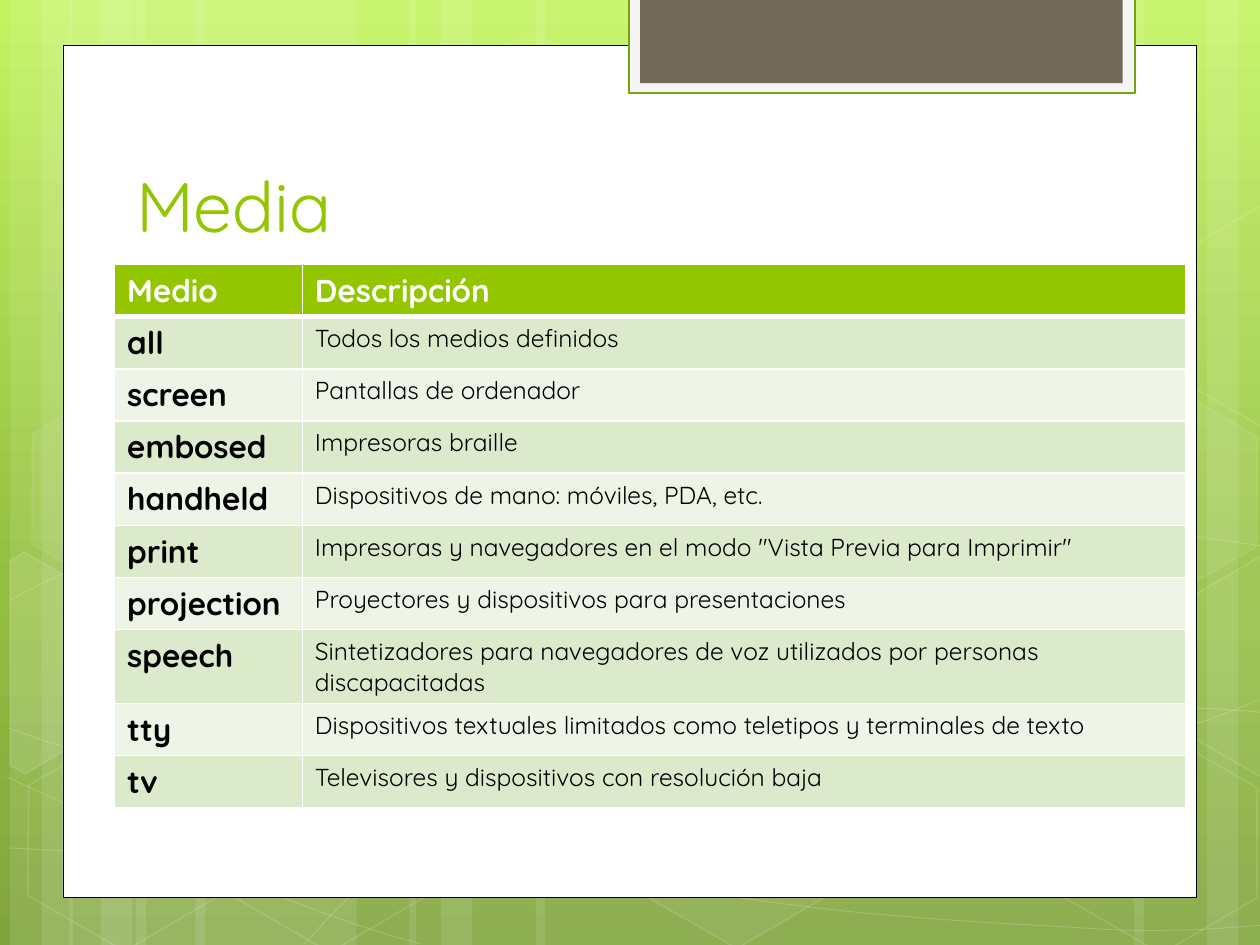
from copy import deepcopy
from math import cos, radians, sin

from lxml import etree
from pptx import Presentation
from pptx.dml.color import RGBColor
from pptx.enum.shapes import MSO_SHAPE
from pptx.enum.text import MSO_ANCHOR, MSO_AUTO_SIZE, PP_ALIGN
from pptx.oxml.ns import qn
from pptx.util import Inches, Pt

RECT, HEX = MSO_SHAPE.RECTANGLE, MSO_SHAPE.HEXAGON
TOP, BOTTOM = MSO_ANCHOR.TOP, MSO_ANCHOR.BOTTOM
NONE, LEFT = MSO_AUTO_SIZE.NONE, PP_ALIGN.LEFT
FONT, WHITE, GREEN, BLACK = "Quicksand", "FFFFFF", "94C600", "000000"
COLS, ROWS, TURN = 1000, 750, 30
UNIT = Inches(10) // COLS
PAGE = (0, 0, COLS, ROWS)

BANDS = [(108, 175), (8, 50), (33, 83), (155, 175), (55, 50), (80, 83),
         (733, 175), (958, 50), (900, 83), (425, 308), (325, 50), (350, 83)]
WAVES = [
    [(7, 673), (61, 676), (115, 679), (190, 678), (265, 677), (358, 675),
     (458, 665), (558, 655), (700, 636), (792, 617), (883, 598), (977, 568),
     (1007, 551)],
    [(7, 477), (36, 461), (65, 446), (121, 431), (178, 416), (259, 394),
     (347, 387), (436, 380), (544, 379), (654, 387), (764, 395), (947, 426),
     (1007, 434)],
    [(6, 617), (127, 672), (247, 727), (334, 749)],
    [(7, 578), (38, 589), (70, 600), (128, 616), (186, 631), (273, 656),
     (357, 673), (440, 690), (545, 708), (628, 718), (711, 729), (800, 733),
     (853, 736), (905, 740), (919, 738), (945, 738), (971, 737), (989, 735),
     (1007, 734)],
    [(242, 749), (260, 729), (278, 709), (302, 691), (326, 673), (360, 653),
     (388, 639), (416, 625), (433, 619), (470, 609), (506, 599), (573, 585),
     (608, 578), (644, 571), (649, 571), (680, 569), (711, 566), (760, 563),
     (794, 562), (829, 561), (886, 562), (886, 562), (886, 562), (953, 562),
     (953, 562), (971, 563), (988, 564), (997, 565), (1006, 566), (1003, 565),
     (1006, 566)],
]
HEXES = [(334, 36, 4, 8), (497, 589, 6, 12), (11, 591, 0, 12),
         (14, 312, 7, 8), (174, 592, 0, 12), (753, 453, 10, 12),
         (834, 593, 0, 12), (834, 314, 7, 8)]
PARTS = [
    ((-33, 459, 138, 152), 10,
     [(8, 445), (19, 438), (96, 482), (95, 570), (20, 614), (8, 607)]),
    ((917, 444, 136, 152), 4,
     [(926, 485), (1001, 441), (1009, 446), (1009, 613), (1002, 617),
      (926, 573)]),
    ((917, 165, 136, 152), 0,
     [(926, 207), (1001, 163), (1010, 168), (1009, 335), (1002, 339),
      (926, 295)]),
]
MEDIA = [
    ("Medio", "Descripción"),
    ("all", "Todos los medios definidos"),
    ("screen", "Pantallas de ordenador"),
    ("embosed", "Impresoras braille"),
    ("handheld", "Dispositivos de mano: móviles, PDA, etc."),
    ("print", 'Impresoras y navegadores en el modo "Vista Previa para Imprimir"'),
    ("projection", "Proyectores y dispositivos para presentaciones"),
    ("speech", "Sintetizadores para navegadores de voz utilizados por personas "
               "discapacitadas"),
    ("tty", "Dispositivos textuales limitados como teletipos y terminales de texto"),
    ("tv", "Televisores y dispositivos con resolución baja"),
]


def rgb(code):
    return RGBColor.from_string(code)


def tint(fill, code, alpha=100):
    if not alpha:
        fill.background()
        return
    fill.solid()
    fill.fore_color.rgb = rgb(code)
    if alpha < 100:
        node = fill._xPr.find(".//" + qn("a:srgbClr"))
        etree.SubElement(node, qn("a:alpha"), val=str(alpha * 1000))


def style(shape, fill=WHITE, alpha=100, line=WHITE, width=0, clear=100):
    shape.shadow.inherit = False
    tint(shape.fill, fill, alpha)
    tint(shape.line.fill, line, clear if width else 0)
    if width:
        shape.line.width = Pt(width)
    return shape


def spot(box, x, y, w, h):
    return [UNIT * n for n in (box[0] + x, box[1] + y, w, h)]


def block(slide, box, area, kind=RECT, **look):
    return style(slide.shapes.add_shape(kind, *spot(box, *area)), **look)


def trace(slide, box, points, close, **look):
    dots = [(round((box[0] + x) * UNIT), round((box[1] + y) * UNIT))
            for x, y in points]
    pen = slide.shapes.build_freeform(*dots[0], scale=1.0)
    pen.add_line_segments(dots[1:], close=close)
    return style(pen.convert_to_shape(), **look)


def bend(shape):
    lines = list(shape.element.iter(qn("a:lnTo")))
    for first, *rest in zip(lines[::3], lines[1::3], lines[2::3]):
        curve = etree.Element(qn("a:cubicBezTo"))
        first.addprevious(curve)
        for line in (first, *rest):
            curve.append(line[0])
            line.getparent().remove(line)


def unturn(points, area):
    left, top, wide, high = area
    mid, row = left + wide / 2, top + high / 2
    c, s = cos(radians(TURN)), sin(radians(TURN))
    return [(mid + (x - mid) * c + (y - row) * s,
             row - (x - mid) * s + (y - row) * c) for x, y in points]


def write(frame, text, size=14, color=BLACK, bold=False):
    para = frame.paragraphs[0]
    para.alignment = LEFT
    run = para.add_run()
    run.text = text
    font = run.font
    font.name, font.size, font.bold = FONT, Pt(size), bold
    font.color.rgb = rgb(color)


def sky(slide):
    fill = slide.background.fill
    fill.gradient()
    fill.gradient_angle = 270
    stops = slide.element.find(".//" + qn("a:gsLst"))
    stops.append(deepcopy(stops[-1]))
    shades = [(0, "C3F35F"), (0.62, "93BF3F"), (1, "81A53E")]
    for stop, (place, code) in zip(fill.gradient_stops, shades):
        stop.position = place
        stop.color.rgb = rgb(code)


def decor(slide, box):
    for x, w in BANDS:
        block(slide, box, (x, 0, w, box[3]), alpha=10)
    for wave in WAVES:
        bend(trace(slide, box, wave, False, alpha=0, width=0.5, clear=20))
    for x, y, alpha, clear in HEXES:
        cell = block(slide, box, (x, y, 175, 152), HEX, alpha=alpha,
                     width=1, clear=clear)
        cell.adjustments[0] = 0.285
        cell.rotation = TURN
    for area, alpha, points in PARTS:
        part = trace(slide, box, unturn(points, area), True, alpha=alpha,
                     width=1, clear=12)
        part.rotation = TURN


def panel(slide, box):
    block(slide, box, (0, 0, *box[2:]), line=BLACK, width=0.5)
    block(slide, box, (449, -38, 402, 76), fill="F5F5F5", line="74A510",
          width=1.25)
    block(slide, box, (458, -38, 383, 68), fill="71685A")


def head(slide, box, text):
    title = slide.shapes.title
    title.element.getparent().append(title.element)
    title.left, title.top, title.width, title.height = spot(box, 0, 0, *box[2:])
    frame = title.text_frame
    frame.auto_size, frame.word_wrap = NONE, True
    frame.vertical_anchor = BOTTOM
    write(frame, text, size=40, color=GREEN)


def edge(cell, base):
    props = cell._tc.get_or_add_tcPr()
    for index, side in enumerate(("lnL", "lnR", "lnT", "lnB")):
        width = base if side == "lnB" else 1
        line = etree.Element(qn("a:" + side), w=str(Pt(width)))
        fill = etree.SubElement(line, qn("a:solidFill"))
        etree.SubElement(fill, qn("a:srgbClr"), val=WHITE)
        props.insert(index, line)


def grid(slide, box, data):
    area = spot(box, 0, 0, *box[2:])
    holder = slide.shapes.add_table(len(data), 2, *area)
    table = holder.table
    first = 149
    for col, wide in zip(table.columns, (first, box[2] - first)):
        col.width = UNIT * wide
    for r, pair in enumerate(data):
        table.rows[r].height = UNIT * (14 if r else 39)
        shade = ("EEF5E7", "DCEACC")[r % 2] if r else GREEN
        for c, text in enumerate(pair):
            cell = table.cell(r, c)
            cell.vertical_anchor = TOP
            tint(cell.fill, shade)
            edge(cell, 1 if r else 3)
            bold = r == 0 or c == 0
            write(cell.text_frame, text, size=18 if bold else 14,
                  color=BLACK if r else WHITE, bold=bold)
    holder.height = area[3]


def main():
    deck = Presentation()
    deck.slide_width, deck.slide_height = UNIT * COLS, UNIT * ROWS
    slide = deck.slides.add_slide(deck.slide_layouts[5])
    sky(slide)
    decor(slide, PAGE)
    panel(slide, (50, 36, 900, 676))
    head(slide, (98, 76, 768, 125), "Media")
    grid(slide, (91, 210, 850, 417), MEDIA)
    deck.save("out.pptx")


if __name__ == "__main__":
    main()
